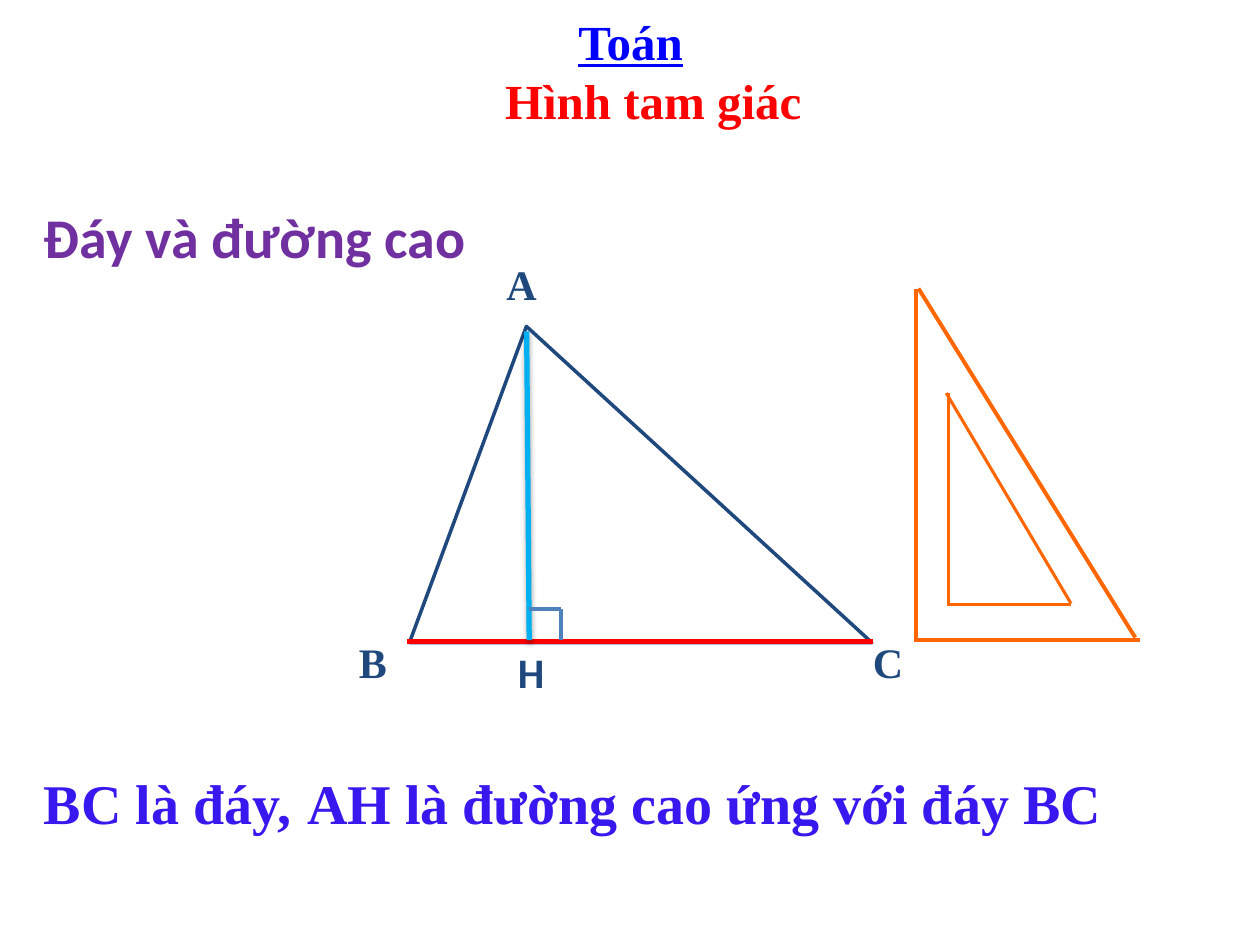
from lxml import etree
from pptx import Presentation, util as u
from pptx.dml.color import RGBColor
from pptx.enum import shapes, text
from pptx.oxml import ns

THEME = {
    "serif": "Times New Roman", "sans": "Calibri",
    "label": 24, "title": 28, "body": 32,
    "white": "FFFFFF", "navy": "1F497D", "red": "FF0000", "cyan": "00B0F0",
    "orange": "FF6600", "steel": "4F81BD", "blue": "0000FF",
    "indigo": "3718EE", "purple": "7030A0",
}
LEFT, CENTER = text.PP_ALIGN.LEFT, text.PP_ALIGN.CENTER

# Content: box, wording, font, size, colour, alignment
TITLE_BOX = (1.67, 0.04, 6.67, 1.04)
TITLE_LINES = [("Toán", "blue", CENTER, True), ("Hình tam giác", "red", LEFT, False)]
SUBTITLE_INDENT = 2.24
HEADING = ((0.25, 1.56, 3.89, 0.64), "Đáy và đường cao", "sans", "body", "purple")
CONCLUSION = [
    ((0.25, 6.05, 2.25, 0.64), "BC là đáy,"),
    ((2.34, 6.05, 6.69, 0.64), "AH là đường cao ứng với đáy BC"),
]
VERTICES = [
    ((3.92, 2, 0.45, 0.51), "A"),
    ((2.75, 5, 0.43, 0.51), "B"),
    ((6.83, 5, 0.45, 0.51), "C"),
]
FOOT = ((3.99, 5.08, 0.45, 0.61), "H", "sans", "label", "navy", CENTER)

# Figure: triangle ABC, then lines as start, end
TRIANGLE, APEX_SHARE = (3.25, 2.59, 3.67, 2.51), 0.253
BASE = ((3.23, 5.09), (6.93, 5.09))
HEIGHT = ((4.18, 2.63), (4.2, 5.08))
RIGHT_ANGLE = [((4.2, 4.83), (4.45, 4.83)), ((4.45, 4.83), (4.45, 5.08))]
SET_SQUARE = {
    1.75: [((8.5, 4.8), (7.52, 4.8)), ((7.53, 4.79), (7.53, 3.12)),
           ((7.51, 3.12), (8.5, 4.79))],
    2.25: [((9.05, 5.08), (7.25, 5.08)), ((7.27, 5.07), (7.27, 2.29)),
           ((7.29, 2.29), (9.01, 5.06))],
}

deck = Presentation()
deck.slide_width, deck.slide_height = u.Inches(10), u.Inches(7.5)
slide = deck.slides.add_slide(deck.slide_layouts[6])


def color(name):
    return RGBColor.from_string(THEME[name])


def inches(values):
    return [u.Inches(v) for v in values]


def style(paragraph, font, size, ink, align=LEFT, underline=False):
    paragraph.alignment = align
    for run in paragraph.runs:
        run.font.name, run.font.size = THEME[font], u.Pt(THEME[size])
        run.font.bold, run.font.underline = True, underline
        run.font.color.rgb = color(ink)


def add_text(box, words, font, size, ink, align=LEFT, wrap=True):
    frame = slide.shapes.add_textbox(*inches(box)).text_frame
    frame.word_wrap = wrap
    frame.text = words
    style(frame.paragraphs[0], font, size, ink, align)
    return frame


def add_line(ends, ink, width):
    start, end = ends
    line = slide.shapes.add_connector(
        shapes.MSO_CONNECTOR.STRAIGHT, *inches(start + end))
    line.line.color.rgb, line.line.width = color(ink), u.Pt(width)
    return etree.SubElement(line._element.spPr, ns.qn("a:effectLst"))


# Triangle with its base and height
triangle = slide.shapes.add_shape(
    shapes.MSO_SHAPE.ISOSCELES_TRIANGLE, *inches(TRIANGLE))
triangle.adjustments[0] = APEX_SHARE
triangle.shadow.inherit = False
triangle.fill.solid()
triangle.fill.fore_color.rgb = color("white")
triangle.line.color.rgb, triangle.line.width = color("navy"), u.Pt(2)
add_line(BASE, "red", 3)
effects = add_line(HEIGHT, "cyan", 3)
shadow = etree.SubElement(effects, ns.qn("a:outerShdw"), blurRad=str(u.Pt(3.1)),
                          dist=str(u.Pt(1.8)), dir="5400000", rotWithShape="0")
shade = etree.SubElement(shadow, ns.qn("a:srgbClr"), val="000000")
etree.SubElement(shade, ns.qn("a:alpha"), val="35000")

# Set square and right-angle mark
for width, sides in SET_SQUARE.items():
    for side in sides:
        add_line(side, "orange", width)
for side in RIGHT_ANGLE:
    add_line(side, "steel", 2.25)

# Point labels
for box, letter in VERTICES:
    add_text(box, letter, "serif", "label", "navy", wrap=False)
foot = add_text(*FOOT, wrap=False)
foot.margin_bottom = u.Inches(0.15)

# Title, heading and conclusion
title = add_text(TITLE_BOX, "\n".join(line[0] for line in TITLE_LINES),
                 "serif", "title", "blue")
for paragraph, (_, ink, align, underline) in zip(title.paragraphs, TITLE_LINES):
    style(paragraph, "serif", "title", ink, align, underline)
subtitle = title.paragraphs[1]._p.get_or_add_pPr()
subtitle.set("marL", str(u.Inches(SUBTITLE_INDENT)))
subtitle.set("indent", "0")
add_text(*HEADING)
for box, words in CONCLUSION:
    frame = add_text(box, words, "serif", "body", "indigo")
    before = etree.SubElement(frame.paragraphs[0]._p.get_or_add_pPr(), ns.qn("a:spcBef"))
    etree.SubElement(before, ns.qn("a:spcPct"), val="50000")

deck.save("out.pptx")
